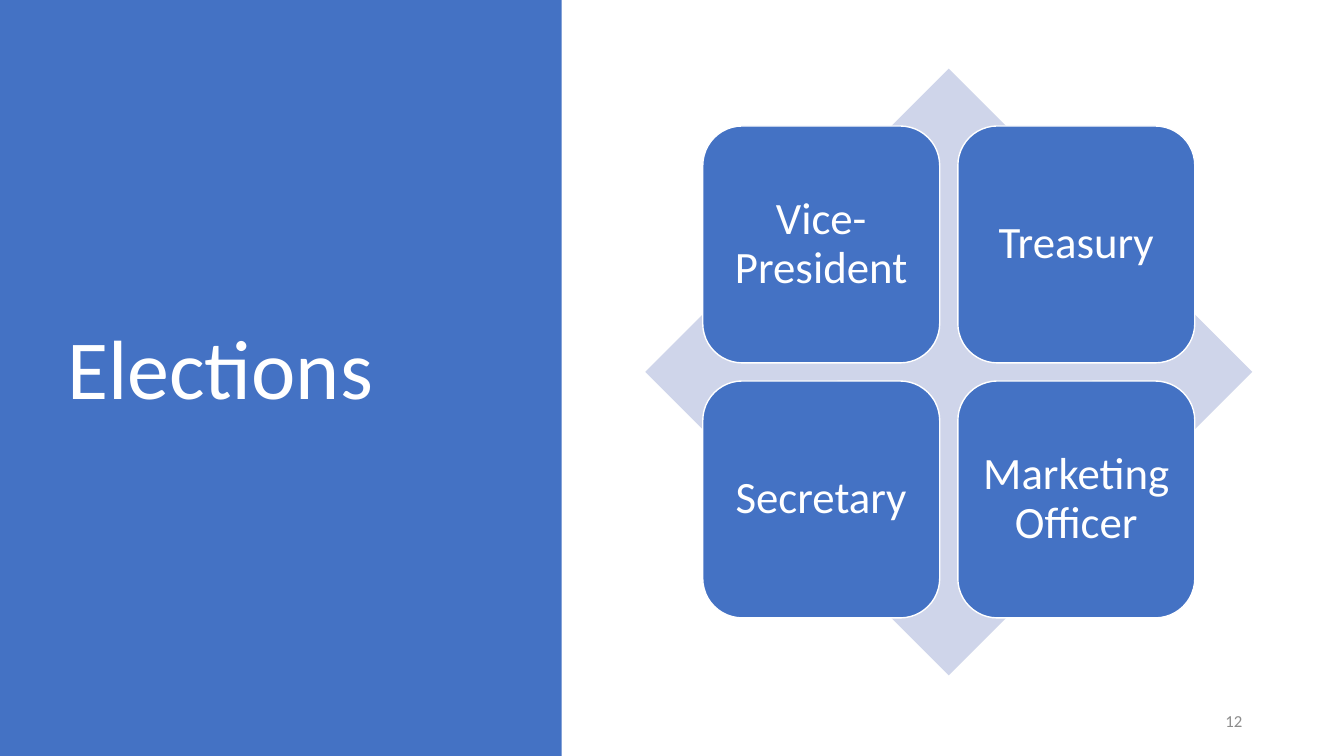
from dataclasses import dataclass

from pptx import Presentation
from pptx.dml.color import RGBColor as RGB
from pptx.enum.shapes import MSO_SHAPE as SHAPE
from pptx.enum.text import MSO_ANCHOR as ANCHOR, PP_ALIGN as ALIGN
from pptx.util import Inches, Pt


@dataclass(frozen=True)
class Theme:
    font: str = "Calibri"
    blue: str = "4472C4"
    pale: str = "CFD5EA"
    white: str = "FFFFFF"
    gray: str = "8C8C8C"
    title: int = 60
    role: int = 32
    number: int = 12


class SlideBuilder:
    """Draws styled elements on the current slide."""

    def __init__(self, s, theme):
        self.s = s
        self.theme = theme

    def shape(self, kind, box, fill, line=None):
        sp = self.s.shapes.add_shape(kind, *map(Inches, box))
        sp.shadow.inherit = False
        sp.fill.solid()
        sp.fill.fore_color.rgb = RGB.from_string(fill)
        if line:
            sp.line.color.rgb = RGB.from_string(line)
            sp.line.width = Pt(1)
        else:
            sp.line.fill.background()
        return sp

    def label(self, sp, text, size, color, align, spacing=1.0):
        tf = sp.text_frame
        tf.word_wrap = True
        tf.vertical_anchor = ANCHOR.MIDDLE
        tf.text = text
        p = tf.paragraphs[0]
        p.alignment = align
        p.line_spacing = spacing
        font = p.runs[0].font
        font.name = self.theme.font
        font.size = Pt(size)
        font.color.rgb = RGB.from_string(color)

    def text(self, box, text, size, color, align=ALIGN.LEFT, spacing=1.0):
        sp = self.s.shapes.add_textbox(*map(Inches, box))
        self.label(sp, text, size, color, align, spacing)

    def tile(self, box, text):
        t = self.theme
        sp = self.shape(SHAPE.ROUNDED_RECTANGLE, box, t.blue, t.white)
        self.label(sp, text, t.role, t.white, ALIGN.CENTER, 0.9)
        tf = sp.text_frame
        tf.margin_left = tf.margin_right = Inches(0.13)
        tf.margin_top = tf.margin_bottom = Inches(0.13)

    def tile_grid(self, left, top, side, pitch, names, columns=2):
        for i, name in enumerate(names):
            row, col = divmod(i, columns)
            self.tile((left + col * pitch, top + row * pitch, side, side), name)


def main():
    prs = Presentation()
    prs.slide_width, prs.slide_height = Inches(13.33), Inches(7.5)
    t = Theme()
    slide = SlideBuilder(prs.slides.add_slide(prs.slide_layouts[6]), t)

    slide.shape(SHAPE.RECTANGLE, (0, 0, 5.57, 7.5), t.blue)
    slide.text((0.57, 0.68, 4.16, 6.02), "Elections", t.title, t.white, spacing=0.9)
    slide.text((9.42, 6.95, 3, 0.4), "12", t.number, t.gray, ALIGN.RIGHT)

    slide.shape(SHAPE.DIAMOND, (6.4, 0.68, 6.02, 6.02), t.pale)
    roles = ["Vice-President", "Treasury", "Secretary", "Marketing Officer"]
    slide.tile_grid(6.97, 1.25, 2.35, 2.53, roles)

    prs.save("out.pptx")


if __name__ == "__main__":
    main()
